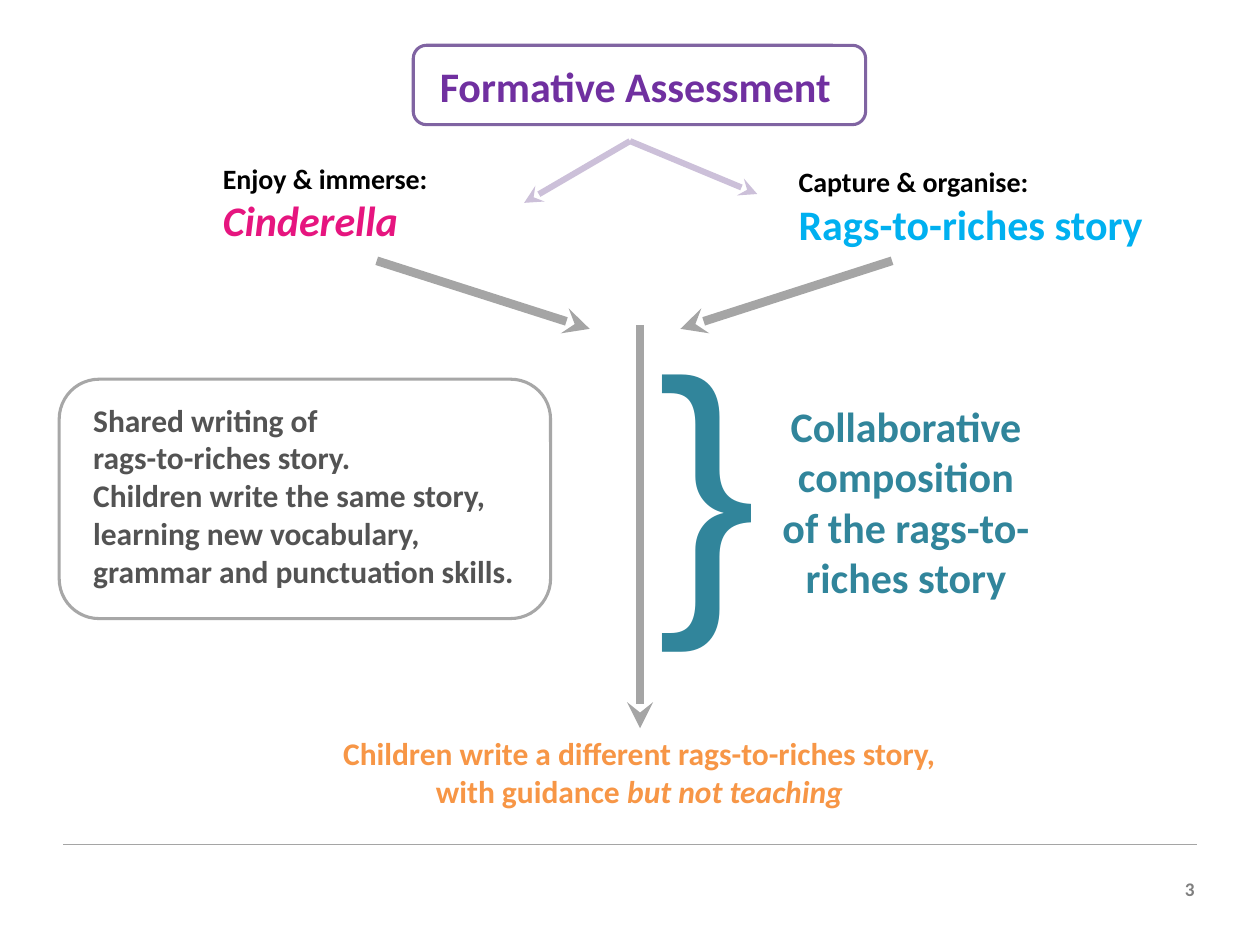
from pptx import Presentation
from pptx.dml.color import RGBColor
from pptx.enum.shapes import MSO_CONNECTOR, MSO_SHAPE
from pptx.enum.text import MSO_ANCHOR, MSO_AUTO_SIZE, PP_ALIGN
from pptx.oxml.ns import qn
from pptx.util import Inches, Pt
from lxml import etree

LEFT, CENTER, RIGHT = PP_ALIGN.LEFT, PP_ALIGN.CENTER, PP_ALIGN.RIGHT
STRAIGHT = MSO_CONNECTOR.STRAIGHT
ROUNDED = MSO_SHAPE.ROUNDED_RECTANGLE
TOP = MSO_ANCHOR.TOP
FIXED = MSO_AUTO_SIZE.NONE

COLORS = {
    "purple": "7030A0", "frame": "8064A2", "lilac": "CCC0D9",
    "black": "000000", "pink": "E6157F", "blue": "00B0F0",
    "teal": "31859B", "orange": "F79646", "text": "535353",
    "outline": "A7A7A7", "gray": "A5A5A5", "number": "7F7F7F",
}

# The grid has 100 columns and 75 rows
WIDTH, HEIGHT = Inches(10), Inches(7.5)
COLUMN, ROW = WIDTH / 100, HEIGHT / 75


def color(name):
    return RGBColor.from_string(COLORS[name])


def cells(*values):
    """Turn alternating columns and rows into lengths."""
    return [round(value * (ROW if i % 2 else COLUMN)) for i, value in enumerate(values)]


def inset(box, left, top, right, bottom):
    """Shrink a box by a number of cells on each side."""
    x, y, width, height = box
    return x + left, y + top, width - left - right, height - top - bottom


def style(span, size, ink, bold=True, italic=False, face="Calibri"):
    font = span.font
    font.name, font.size, font.bold, font.italic = face, Pt(size), bold, italic
    font.color.rgb = color(ink)


def write(page, box, lines, align=LEFT, margin=0.1):
    """Add a text box; each line is a (text, size, ink, options) paragraph."""
    label = page.shapes.add_textbox(*cells(*box))
    frame = label.text_frame
    frame.word_wrap, frame.vertical_anchor = True, TOP
    frame.margin_left = frame.margin_right = Inches(margin)
    for i, (text, size, ink, options) in enumerate(lines):
        para = frame.paragraphs[0] if i == 0 else frame.add_paragraph()
        para.text, para.alignment = text, align
        for span in para.runs:
            style(span, size, ink, **options)
    return frame


def rounded_frame(page, box, ink):
    frame = page.shapes.add_shape(ROUNDED, *cells(*box))
    frame.shadow.inherit = False
    frame.fill.background()
    frame.line.color.rgb, frame.line.width = color(ink), Pt(1.75)


def line(page, start, end, ink, width, arrow=True):
    connector = page.shapes.add_connector(STRAIGHT, *cells(*start, *end))
    connector.line.color.rgb, connector.line.width = color(ink), Pt(width)
    if arrow:
        etree.SubElement(connector.line._get_or_add_ln(), qn("a:tailEnd"), type="stealth")
    etree.SubElement(connector._element.spPr, qn("a:effectLst"))


def title(page, box):
    rounded_frame(page, box, "frame")
    heading = page.shapes.title
    # The text area is wider than its frame, which centres the heading
    area = inset(box, -19.9, 0.7, -20, 0.5)
    heading.left, heading.top, heading.width, heading.height = cells(*area)
    frame = heading.text_frame
    frame.text = "Formative Assessment "
    frame.auto_size, frame.vertical_anchor = FIXED, TOP
    para = frame.paragraphs[0]
    para.alignment = CENTER
    style(para.runs[0], 24, "purple")


def stage(page, box, step, subject, ink, italic=False):
    write(page, box, [(step, 16, "black", {}), (subject, 24, ink, {"italic": italic})])


def arrows(page, box):
    """Split from the title to both stages, then join into one downward line."""
    x, y, width, height = box
    split = (x + 20.1, y)
    for end in ((x + 30.2, y + 4.2), (x + 11.7, y + 4.9)):
        line(page, split, end, "lilac", 3.5)
    for start, end in ((x, x + 16.9), (x + width, x + width - 16.8)):
        line(page, (start, y + 9.5), (end, y + 14.9), "gray", 5)
    line(page, (x + 20.9, y + 14.6), (x + 20.9, y + height), "gray", 5)


def shared_writing(page, box):
    rounded_frame(page, box, "outline")
    texts = [
        "Shared writing of \vrags-to-riches story.",
        "Children write the same story, learning new vocabulary, "
        "grammar and punctuation skills.",
    ]
    write(page, inset(box, 2.2, 1.2, 2.1, 1.6),
          [(text, 18, "text", {}) for text in texts], margin=0.05)


def collaboration(page, box):
    x, y, width, height = box
    write(page, (x, y, 4.7, height), [("}", 170, "teal", {"bold": False, "face": "Arial"})])
    texts = ["Collaborative composition", "of the rags-to-riches story"]
    write(page, inset(box, 7.7, 8.5, 0, 3.9),
          [(text, 24, "teal", {}) for text in texts], CENTER)


def outcome(page, box):
    frame = write(page, box, [
        ("Children write a different rags-to-riches story, with guidance ", 18, "orange", {}),
    ], CENTER)
    ending = frame.paragraphs[0].add_run()
    ending.text = "but not teaching"
    style(ending, 18, "orange", italic=True)


def footer(page, box):
    x, y, width, height = box
    line(page, (x, y), (x + width, y), "gray", 0.75, arrow=False)
    write(page, (x + width - 3, y + 2.1, 3.8, 2.9), [("3", 11, "number", {})], RIGHT)


def main():
    deck = Presentation()
    deck.slide_width, deck.slide_height = WIDTH, HEIGHT
    page = deck.slides.add_slide(deck.slide_layouts.get_by_name("Title Only"))
    footer(page, (5, 67, 90, 5))
    outcome(page, (24.8, 57.8, 51.9, 7.1))
    shared_writing(page, (4.7, 30.1, 39, 19))
    stage(page, (62.4, 12.6, 38.6, 7.7), "Capture & organise:", "Rags-to-riches story", "blue")
    stage(page, (16.7, 12.3, 22.6, 7.7), "Enjoy & immerse: ", "Cinderella", "pink", italic=True)
    title(page, (32.8, 3.6, 35.9, 6.3))
    arrows(page, (29.9, 11.2, 40.9, 46.6))
    collaboration(page, (51.2, 22.8, 33.7, 29.6))
    deck.save("out.pptx")


if __name__ == "__main__":
    main()
